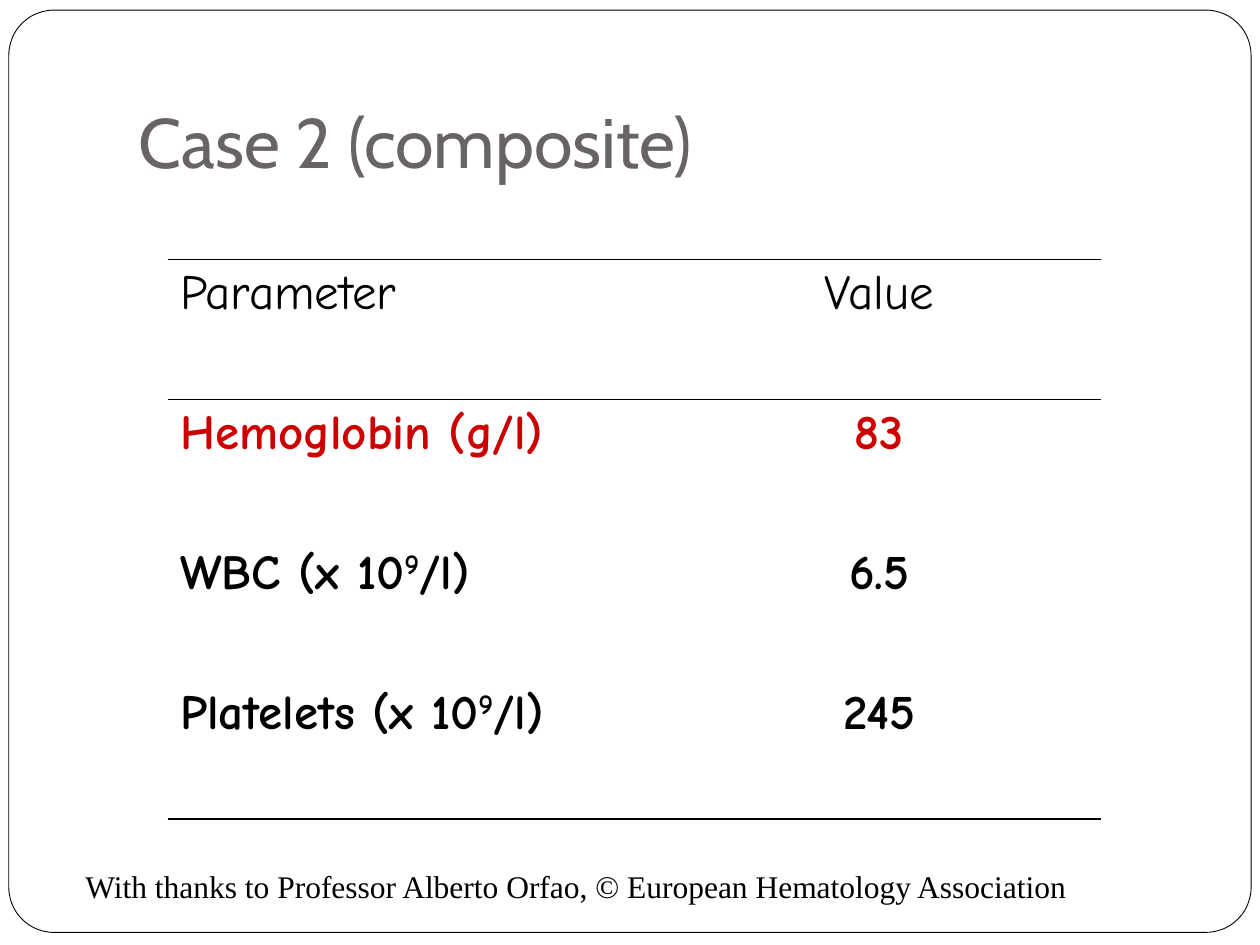
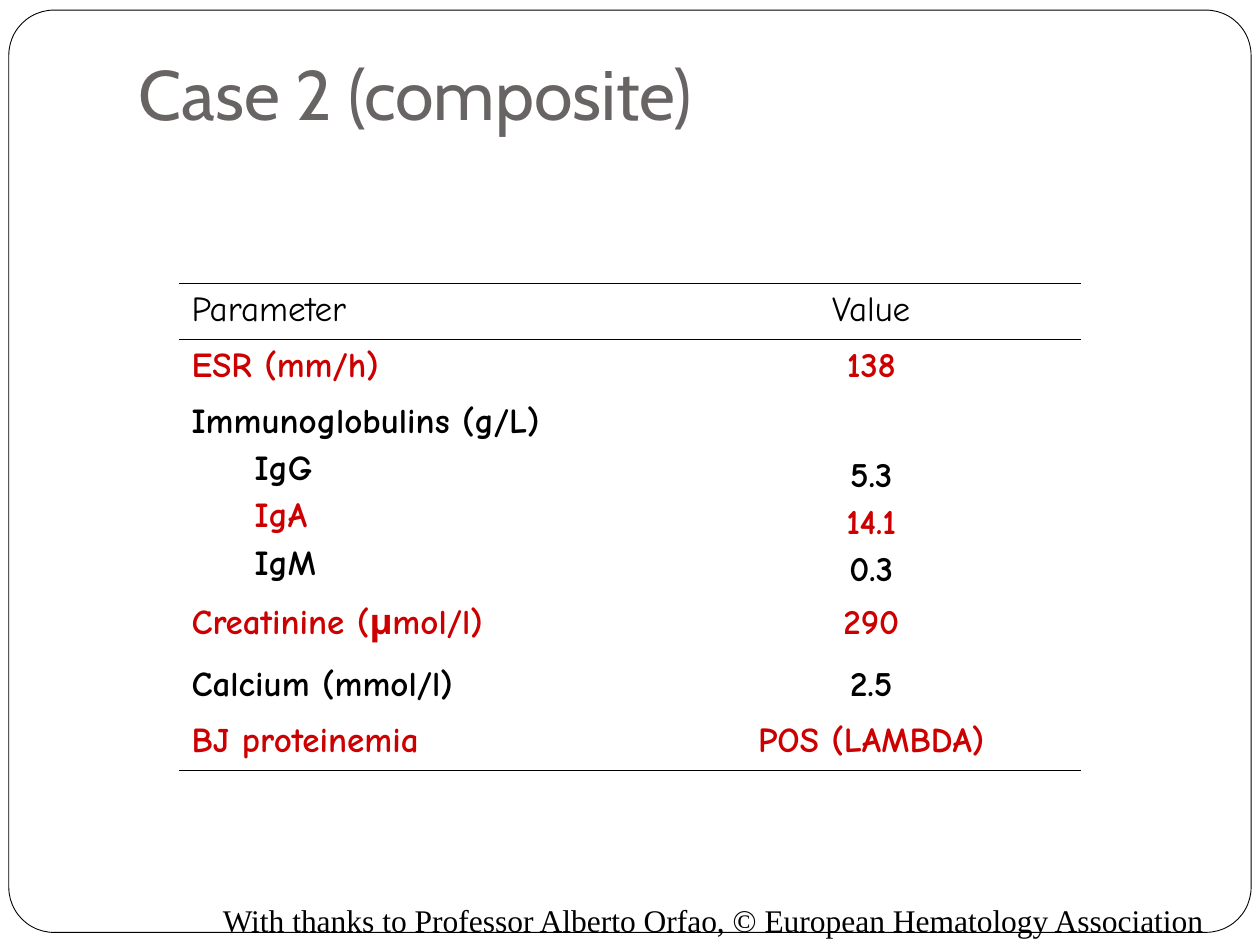
from lxml.etree import SubElement
from pptx import Presentation
from pptx.dml.color import RGBColor
from pptx.enum.shapes import MSO_SHAPE as Shape
from pptx.enum.text import MSO_ANCHOR as Anchor, PP_ALIGN as Align
from pptx.oxml.ns import qn
from pptx.util import Inches, Pt

# Shared style
BLACK, WHITE, GREY, RED = "000000", "FFFFFF", "696464", "CC0000"
TITLE_FONT, TABLE_FONT, CREDIT_FONT = "Cabin", "Comic Neue", "Times New Roman"
TITLE = "Case 2 (composite)"
CREDIT = "With thanks to Professor Alberto Orfao, © European Hematology Association"

# Grid of 100 columns by 75 rows over the slide
WIDTH, HEIGHT = Inches(10), Inches(7.5)
COLUMN, ROW = WIDTH / 100, HEIGHT / 75

# Table content: each row holds lines of (label, value, colour, indented)
HEADER = [("Parameter", "Value", BLACK, False)]
BLOOD_COUNT = [
    HEADER,
    [("Hemoglobin (g/l)", "83", RED, False)],
    [("WBC (x 10^9^/l)", "6.5", BLACK, False)],
    [("Platelets (x 10^9^/l)", "245", BLACK, False)],
]
CHEMISTRY = [
    HEADER,
    [("ESR (mm/h)", "138", RED, False)],
    [("Immunoglobulins (g/L)", None, BLACK, False),
     ("IgG", "5.3", BLACK, True),
     ("IgA", "14.1", RED, True),
     ("IgM", "0.3", BLACK, True)],
    [("Creatinine (μmol/l)", "290", RED, False)],
    [("Calcium (mmol/l)", "2.5", BLACK, False)],
    [("BJ proteinemia", "POS (LAMBDA)", RED, False)],
]


def rgb(color):
    return RGBColor.from_string(color)


def grid(x, y, w, h):
    return [round(n) for n in (x * COLUMN, y * ROW, w * COLUMN, h * ROW)]


def add_run(paragraph, text, font, size, color, bold=False):
    run = paragraph.add_run()
    run.text = text
    run.font.name, run.font.size, run.font.bold = font, Pt(size), bold
    run.font.color.rgb = rgb(color)
    return run


def add_frame(slide):
    frame = slide.shapes.add_shape(Shape.ROUNDED_RECTANGLE, *grid(0.7, 0.8, 98.6, 73.2))
    frame.adjustments[0] = 0.049
    frame.shadow.inherit = False
    frame.fill.solid()
    frame.fill.fore_color.rgb = rgb(WHITE)
    frame.line.color.rgb = rgb(BLACK)
    frame.line.width = Pt(0.5)
    # Send behind the title
    frame.element.getparent().insert(2, frame.element)


def set_title(slide, place):
    title = slide.shapes.title
    title.left, title.top, title.width, title.height = grid(*place)
    frame = title.text_frame
    frame.vertical_anchor = Anchor.BOTTOM
    frame.margin_bottom = Inches(0.1)
    paragraph = frame.paragraphs[0]
    paragraph.alignment = Align.LEFT
    add_run(paragraph, TITLE, TITLE_FONT, 40, GREY)


def add_credit(slide, x, y):
    credit = slide.shapes.add_textbox(*grid(x, y, 83.3, 4)).text_frame
    credit.word_wrap = True
    add_run(credit.paragraphs[0], CREDIT, CREDIT_FONT, 18, BLACK)


def rule_cell(cell, ruled_sides):
    properties = cell._tc.get_or_add_tcPr()
    for side in "LRTB":
        border = SubElement(properties, qn(f"a:ln{side}"), w=str(Pt(1)))
        if side in ruled_sides:
            fill = SubElement(border, qn("a:solidFill"))
            SubElement(fill, qn("a:srgbClr"), val=BLACK)
        else:
            SubElement(border, qn("a:noFill"))
    cell.fill.background()


def fill_cell(cell, lines, size, align, bold):
    for i, (text, color, indented) in enumerate(lines):
        frame = cell.text_frame
        paragraph = frame.add_paragraph() if i else frame.paragraphs[0]
        paragraph.alignment = align
        paragraph.space_before = Pt(0.2 * size)
        if indented:
            paragraph.level = 1
            paragraph._p.get_or_add_pPr().set("marL", str(Inches(0.5)))
        # Text between carets is superscript
        for j, part in enumerate(text.split("^")):
            run = add_run(paragraph, part, TABLE_FONT, size, color, bold)
            if j % 2:
                run._r.get_or_add_rPr().set("baseline", "30000")


def add_results(slide, results, x, y, widths, heights, size):
    table = slide.shapes.add_table(
        len(results), 2, *grid(x, y, sum(widths), sum(heights))).table
    table.first_row = table.horz_banding = False
    for column, width in zip(table.columns, widths):
        column.width = round(width * COLUMN)
    for i, (lines, height) in enumerate(zip(results, heights)):
        table.rows[i].height = round(height * ROW)
        label_cell, value_cell = table.cell(i, 0), table.cell(i, 1)
        # Rules above and below the header, and under the last row
        sides = ("T" if i < 2 else "") + ("B" if i in (0, len(results) - 1) else "")
        for cell in (label_cell, value_cell):
            rule_cell(cell, sides)
        labels = [(label, color, indented) for label, _, color, indented in lines]
        values = [(value, color, False) for _, value, color, _ in lines if value]
        fill_cell(label_cell, labels, size, Align.LEFT, i > 0)
        fill_cell(value_cell, values, size, Align.CENTER, i > 0)
        # Values of a group line up with its last labels
        if len(values) < len(labels):
            value_cell.vertical_anchor = Anchor.BOTTOM


def add_case_slide(deck, title_place, credit_place):
    slide = deck.slides.add_slide(deck.slide_layouts[5])
    add_frame(slide)
    set_title(slide, title_place)
    add_credit(slide, *credit_place)
    return slide


def main():
    deck = Presentation()
    deck.slide_width, deck.slide_height = WIDTH, HEIGHT

    # Blood count
    slide = add_case_slide(deck, (10, 3, 85, 12.5), (5.8, 68.3))
    add_results(slide, BLOOD_COUNT, 13.3, 20.6, (38.9, 35.2), [11.1] * 4, 28)

    # Chemistry
    slide = add_case_slide(deck, (10, 3, 85.8, 8.7), (16.7, 71))
    add_results(slide, CHEMISTRY, 14.2, 22.5, (38.3, 33.3),
                (4.44, 4.44, 15.5, 4.9, 4.44, 4.44), 20)

    deck.save("out.pptx")


if __name__ == "__main__":
    main()
